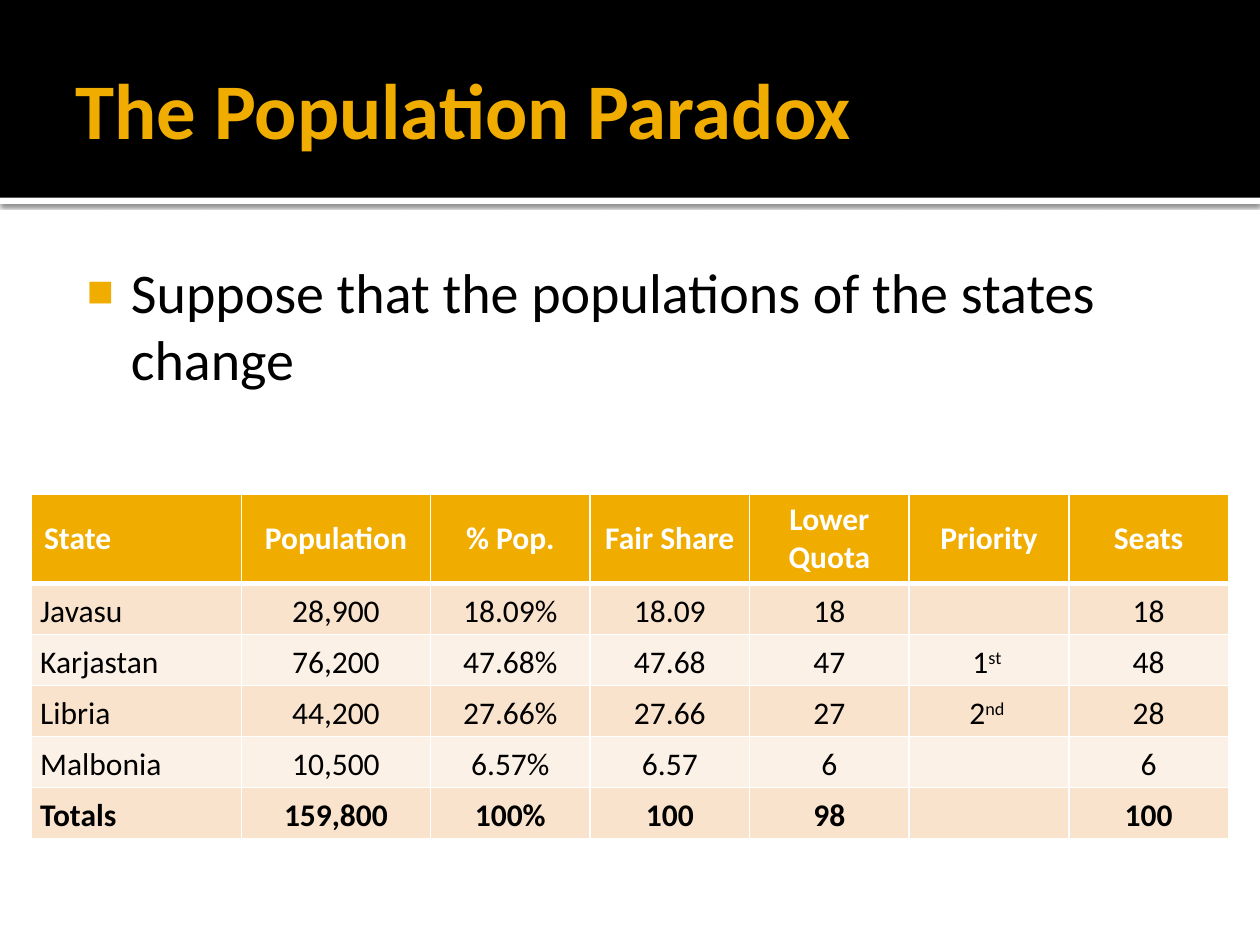
from dataclasses import dataclass

import pptx
import pptx.dml.color
import pptx.enum.shapes
import pptx.enum.text
import pptx.oxml
import pptx.oxml.ns
import pptx.util

Pt = pptx.util.Pt
ALIGN = pptx.enum.text.PP_ALIGN
MIDDLE = pptx.enum.text.MSO_ANCHOR.MIDDLE
FONT = "Calibri"
COLORS = {"gold": "F0AD00", "black": "000000", "white": "FFFFFF",
          "band_dark": "F9E3CC", "band_light": "FCF1E7"}
NS = pptx.oxml.ns.nsdecls("a")


@dataclass
class Bar:
    top: float
    height: float
    color: str
    shadow: bool = False


BARS = [Bar(113, 3.6, "white", shadow=True), Bar(0, 113, "black")]

HEADERS = ["State", "Population", "% Pop.", "Fair Share", "Lower Quota", "Priority", "Seats"]
# A cell may hold "base^superscript"
ROWS = [
    ["Javasu", "28,900", "18.09%", "18.09", "18", "", "18"],
    ["Karjastan", "76,200", "47.68%", "47.68", "47", "1^st ", "48"],
    ["Libria", "44,200", "27.66%", "27.66", "27", "2^nd ", "28"],
    ["Malbonia", "10,500", "6.57%", "6.57", "6", "", "6"],
    ["Totals", "159,800", "100%", "100", "98", "", "100"],
]
COL_WIDTHS = [120, 108] + [91.2] * 5
HEADER_HEIGHT, ROW_HEIGHT = 50.4, 29.2
HEADER_LINE, THIN_LINE = 3, 1


def rgb(name: str) -> pptx.dml.color.RGBColor:
    return pptx.dml.color.RGBColor.from_string(COLORS[name])


def set_all(target, values: dict) -> None:
    for name, value in values.items():
        setattr(target, name, value)


def style_font(font, size: float, color: str, bold: bool = False) -> None:
    set_all(font, {"name": FONT, "size": Pt(size), "bold": bold})
    font.color.rgb = rgb(color)


def draw_bar(s, bar: Bar, depth: int) -> None:
    """Draw a full-width bar behind the placeholders."""
    sp = s.shapes.add_shape(pptx.enum.shapes.MSO_SHAPE.RECTANGLE,
                            0, Pt(bar.top), Pt(720), Pt(bar.height))
    sp.fill.solid()
    sp.fill.fore_color.rgb = rgb(bar.color)
    sp.line.fill.background()
    sp.shadow.inherit = False
    if bar.shadow:
        effects = sp.element.spPr.find(pptx.oxml.ns.qn("a:effectLst"))
        effects.append(pptx.oxml.parse_xml(
            f'<a:outerShdw {NS} blurRad="{Pt(2.5)}" dist="{Pt(0.8)}" dir="5400000">'
            f'<a:srgbClr val="{COLORS["black"]}"><a:alpha val="60000"/></a:srgbClr>'
            '</a:outerShdw>'))
    s.shapes.element.insert(2 + depth, sp.element)


def fill_placeholder(sp, text: str, box: tuple, insets: tuple, anchor,
                     size: float, color: str, bold: bool = False):
    set_all(sp, dict(zip(("left", "top", "width", "height"), map(Pt, box))))
    tf = sp.text_frame
    sides = ("margin_left", "margin_top", "margin_right", "margin_bottom")
    set_all(tf, dict(zip(sides, map(Pt, insets))))
    set_all(tf, {"vertical_anchor": anchor, "word_wrap": True,
                 "auto_size": pptx.enum.text.MSO_AUTO_SIZE.NONE})
    p = tf.paragraphs[0]
    set_all(p, {"alignment": ALIGN.LEFT, "space_before": Pt(0)})
    r = p.add_run()
    r.text = text
    style_font(r.font, size, color, bold)
    return p


def add_square_bullet(p) -> None:
    pPr = p._p.get_or_add_pPr()
    pPr.set("marL", str(Pt(34.5)))
    pPr.set("indent", str(-Pt(25.2)))
    for xml in (f'<a:buClr {NS}><a:srgbClr val="{COLORS["gold"]}"/></a:buClr>',
                f'<a:buSzPct {NS} val="80000"/>',
                f'<a:buFont {NS} typeface="Arial"/>',
                f'<a:buChar {NS} char="■"/>'):
        pPr.append(pptx.oxml.parse_xml(xml))


def fill_cell(cell, text: str, row: int, col: int) -> None:
    header = row == 0
    # Borders go before the fill
    widths = {"L": THIN_LINE, "R": THIN_LINE,
              "T": HEADER_LINE if row == 1 else THIN_LINE,
              "B": HEADER_LINE if header else THIN_LINE}
    tcPr = cell._tc.get_or_add_tcPr()
    for side, width in widths.items():
        tcPr.append(pptx.oxml.parse_xml(
            f'<a:ln{side} {NS} w="{Pt(width)}"><a:solidFill>'
            f'<a:srgbClr val="{COLORS["white"]}"/></a:solidFill></a:ln{side}>'))
    cell.fill.solid()
    band = "band_dark" if row % 2 else "band_light"
    cell.fill.fore_color.rgb = rgb("gold" if header else band)
    cell.vertical_anchor = MIDDLE
    p = cell.text_frame.paragraphs[0]
    p.alignment = ALIGN.CENTER if col else ALIGN.LEFT
    if not header:
        set_all(cell, {"margin_left": Pt(5), "margin_right": Pt(5),
                       "margin_top": 0, "margin_bottom": 0})
        p.line_spacing = 1.15
    for i, part in enumerate(text.split("^") if text else []):
        r = p.add_run()
        r.text = part
        style_font(r.font, 18, "white" if header else "black", header or row == len(ROWS))
        if i:
            r.font._element.set("baseline", "30000")


def draw_table(s, left: float, top: float) -> None:
    heights = [HEADER_HEIGHT] + [ROW_HEIGHT] * len(ROWS)
    table = s.shapes.add_table(len(heights), len(HEADERS), Pt(left), Pt(top),
                               Pt(sum(COL_WIDTHS)), Pt(sum(heights))).table
    table.horz_banding = False
    for column, width in zip(table.columns, COL_WIDTHS):
        column.width = Pt(width)
    for i, (height, texts) in enumerate(zip(heights, [HEADERS] + ROWS)):
        table.rows[i].height = Pt(height)
        for j, text in enumerate(texts):
            fill_cell(table.cell(i, j), text, i, j)


def main() -> None:
    prs = pptx.Presentation()
    set_all(prs, {"slide_width": Pt(720), "slide_height": Pt(540)})
    s = prs.slides.add_slide(prs.slide_layouts[1])

    # Title band with its shadowed rule
    for depth, bar in enumerate(BARS):
        draw_bar(s, bar, depth)

    # Title and bulleted statement
    fill_placeholder(s.shapes.title, "The Population Paradox", (36, 12.2, 648, 98.6),
                     (7.2, 3.6, 3.6, 3.6), MIDDLE, 45, "gold", bold=True)
    p = fill_placeholder(s.placeholders[1], "Suppose that the populations of the states change",
                         (36, 139.7, 648, 364.3), (4.3, 7.2, 7.2, 3.6),
                         pptx.enum.text.MSO_ANCHOR.TOP, 32, "black")
    add_square_bullet(p)

    # Apportionment table
    draw_table(s, 18, 282.2)
    prs.save("out.pptx")


if __name__ == "__main__":
    main()
